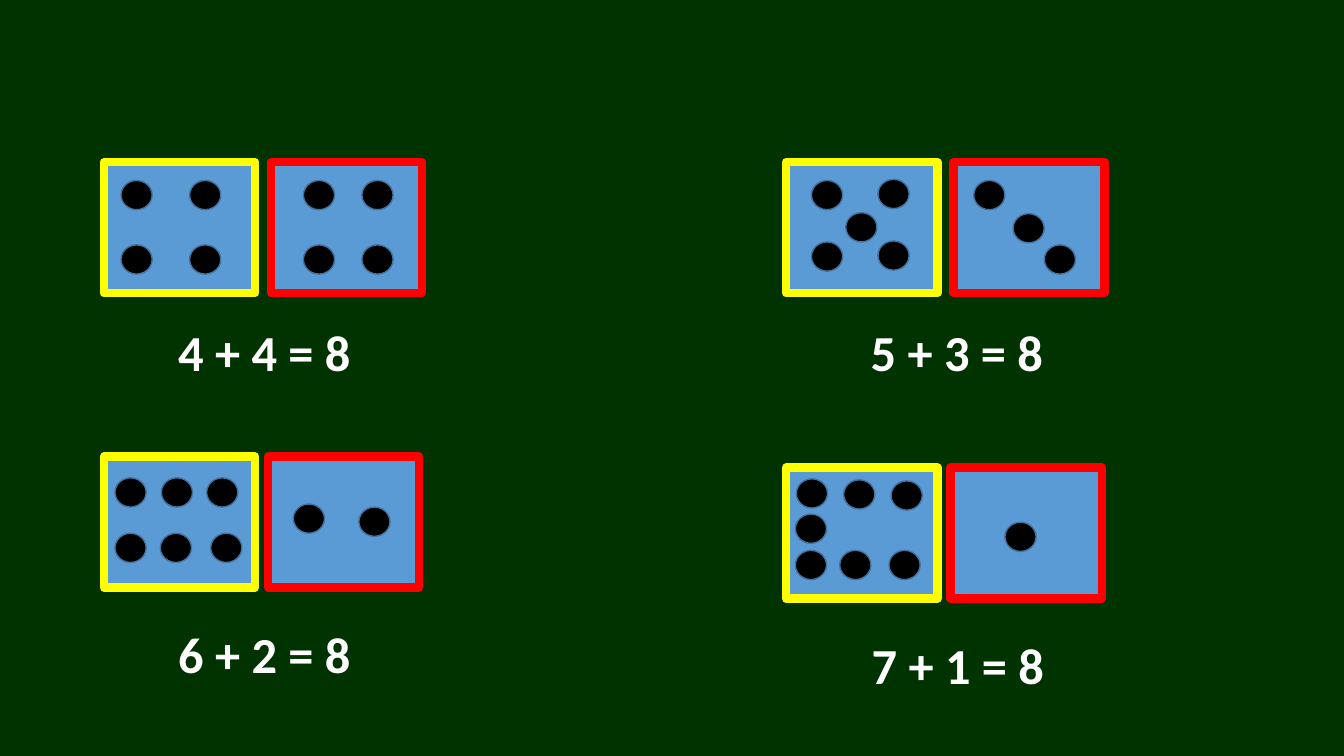
"""Build a slide of domino tiles showing ways to make eight."""
from dataclasses import dataclass
from itertools import product

from pptx import Presentation
from pptx.dml.color import RGBColor
from pptx.enum.shapes import MSO_SHAPE
from pptx.enum.text import MSO_AUTO_SIZE
from pptx.util import Pt

RECTANGLE = MSO_SHAPE.RECTANGLE
OVAL = MSO_SHAPE.OVAL
FIT_SHAPE = MSO_AUTO_SIZE.SHAPE_TO_FIT_TEXT


@dataclass(frozen=True)
class Theme:
    """Hold the colours, font and type size of the slide."""
    background: str = "003300"
    tile: str = "5B9BD5"
    first_border: str = "FFFF00"
    second_border: str = "FF0000"
    dot: str = "000000"
    dot_border: str = "43739E"
    text: str = "FFFFFF"
    font: str = "Calibri"
    equation_size: float = 36


@dataclass(frozen=True)
class Domino:
    """Describe a pair of tiles, with dots placed relative to each tile."""
    left: float
    top: float
    second_offset: float
    equation_left: float
    equation_offset: float
    first_dots: list
    second_dots: list


TILE_SIZE = (108, 93.6)
DOT_SIZE = (22.3, 20.9)
EQUATION_SIZE = (139, 51.1)
LEFT_COLUMN, RIGHT_COLUMN = 74.2, 561.6
TOP_ROW = 115.9

DOMINOES = [
    Domino(LEFT_COLUMN, TOP_ROW, 119.5, 120.2, 110.2,
           list(product((12.2, 61.2), (13, 59))),
           list(product((23, 64.8), (13, 59)))),
    Domino(RIGHT_COLUMN, TOP_ROW, 119.5, 614.9, 110.2,
           [(18, 13), (65.5, 12.2), (42.5, 36), (18, 56.9), (65.5, 56.2)],
           [(14.4, 13), (42.5, 36.7), (64.8, 59)]),
    Domino(LEFT_COLUMN, 326.2, 117.3, 120.2, 115.2,
           [(7.9, 15.1), (41, 15.1), (73.4, 15.1),
            (7.9, 54.7), (40.3, 54.7), (76.3, 54.7)],
           [(18, 33.8), (64.8, 36)]),
    Domino(RIGHT_COLUMN, 334.1, 117.4, 615.6, 115.2,
           [(7.2, 7.9), (41, 8.6), (74.9, 9.4), (6.5, 33.1),
            (6.5, 59), (38.2, 59), (73.4, 59)],
           [(38.8, 38.9)]),
]


class SlideBuilder:
    """Draw dominoes and equations on one slide in the given theme."""

    def __init__(self, slide, theme):
        """Keep the slide and theme, and paint the background."""
        self.slide = slide
        self.theme = theme
        fill = slide.background.fill
        fill.solid()
        fill.fore_color.rgb = RGBColor.from_string(theme.background)

    def add_shape(self, kind, left, top, size, fill, line, line_width):
        """Add a filled and outlined preset shape."""
        shape = self.slide.shapes.add_shape(
            kind, Pt(left), Pt(top), *map(Pt, size))
        shape.shadow.inherit = False
        shape.fill.solid()
        shape.fill.fore_color.rgb = RGBColor.from_string(fill)
        shape.line.color.rgb = RGBColor.from_string(line)
        shape.line.width = Pt(line_width)

    def add_tile(self, left, top, border, dots):
        """Add one bordered tile with its dots."""
        theme = self.theme
        self.add_shape(RECTANGLE, left, top, TILE_SIZE, theme.tile, border, 6)
        for across, down in dots:
            self.add_shape(OVAL, left + across, top + down, DOT_SIZE,
                           theme.dot, theme.dot_border, 1)

    def add_equation(self, left, top, text):
        """Add a bold equation."""
        box = self.slide.shapes.add_textbox(
            Pt(left), Pt(top), *map(Pt, EQUATION_SIZE))
        frame = box.text_frame
        frame.word_wrap = False
        frame.auto_size = FIT_SHAPE
        frame.text = text
        font = frame.paragraphs[0].runs[0].font
        font.name = self.theme.font
        font.size = Pt(self.theme.equation_size)
        font.bold = True
        font.color.rgb = RGBColor.from_string(self.theme.text)

    def add_domino(self, domino):
        """Add both tiles and the sum of their dots."""
        theme = self.theme
        self.add_tile(domino.left, domino.top, theme.first_border,
                      domino.first_dots)
        self.add_tile(domino.left + domino.second_offset, domino.top,
                      theme.second_border, domino.second_dots)
        first, second = len(domino.first_dots), len(domino.second_dots)
        self.add_equation(domino.equation_left,
                          domino.top + domino.equation_offset,
                          f"{first} + {second} = {first + second}")


def main():
    """Build and save the presentation."""
    presentation = Presentation()
    presentation.slide_width = Pt(960)
    presentation.slide_height = Pt(540)
    slide = presentation.slides.add_slide(presentation.slide_layouts[6])
    builder = SlideBuilder(slide, Theme())
    for domino in DOMINOES:
        builder.add_domino(domino)
    presentation.save("out.pptx")


if __name__ == "__main__":
    main()
